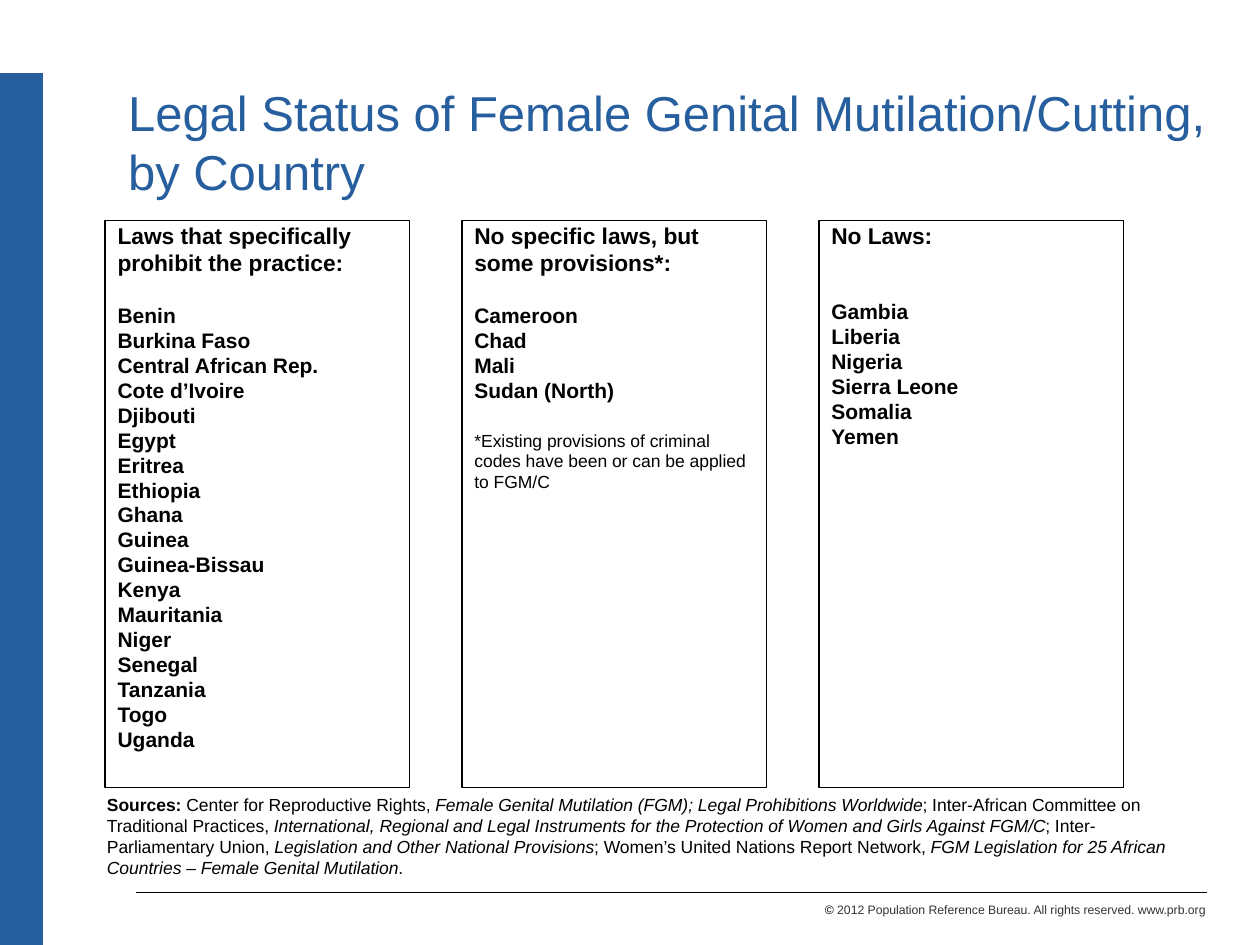
from dataclasses import dataclass

from lxml.etree import SubElement
from pptx import Presentation
from pptx.dml.color import RGBColor
from pptx.enum.shapes import MSO_CONNECTOR as CONN, MSO_SHAPE as SHAPE
from pptx.enum.text import MSO_ANCHOR as ANCHOR, MSO_AUTO_SIZE as AUTO, PP_ALIGN as ALIGN
from pptx.oxml.ns import qn
from pptx.util import Emu, Pt

PX = 9525  # 96 px to the inch
FONT = "Arial"
COLORS = {"blue": "265E9E", "black": "000000", "gray": "333333"}


@dataclass
class Group:
    """Lines of one style, with the gap in points above the first one."""
    lines: list[str]
    size: int
    bold: bool = True
    gap: float = 0


@dataclass
class Rule:
    start: tuple[int, int]
    end: tuple[int, int]
    color: str
    width: float


COLUMNS = [
    [Group(["Laws that specifically", "prohibit the practice:"], 13),
     Group(["Benin", "Burkina Faso", "Central African Rep.", "Cote d’Ivoire", "Djibouti",
            "Egypt", "Eritrea", "Ethiopia", "Ghana", "Guinea", "Guinea-Bissau", "Kenya",
            "Mauritania", "Niger", "Senegal", "Tanzania", "Togo", "Uganda"], 12, gap=18)],
    [Group(["No specific laws, but", "some provisions*:"], 13),
     Group(["Cameroon", "Chad", "Mali", "Sudan (North)"], 12, gap=18),
     Group(["*Existing provisions of criminal", "codes have been or can be applied",
            "to FGM/C"], 10, bold=False, gap=18)],
    [Group(["No Laws:"], 13),
     Group(["Gambia", "Liberia", "Nigeria", "Sierra Leone", "Somalia", "Yemen"], 12, gap=31.5)],
]
COL_LEFT, COL_TOP, COL_W, COL_H, COL_PITCH = 80, 168, 232, 432, 272

RULES = [
    Rule((16, 56), (16, 720), "blue", 25),
    Rule((920, 680), (104, 680), "black", 0.5),
]

# Roman and italic parts alternate after the bold label
SOURCES = [
    " Center for Reproductive Rights, ",
    "Female Genital Mutilation (FGM); Legal Prohibitions Worldwide",
    "; Inter-African Committee on Traditional Practices, ",
    "International, Regional and Legal Instruments for the Protection of Women and Girls"
    " Against FGM/C",
    "; Inter-Parliamentary Union, ",
    "Legislation and Other National Provisions",
    "; Women’s United Nations Report Network, ",
    "FGM Legislation for 25 African Countries – Female Genital Mutilation",
    ".",
]


def px(n: int) -> Emu:
    return Emu(n * PX)


def rgb(name: str) -> RGBColor:
    return RGBColor.from_string(COLORS[name])


def place(sp, left: int, top: int, width: int, height: int) -> None:
    box = {"left": left, "top": top, "width": width, "height": height}
    for name, value in box.items():
        setattr(sp, name, px(value))


def set_frame(tf, anchor=ANCHOR.TOP) -> None:
    fmt = {"word_wrap": True, "auto_size": AUTO.NONE, "vertical_anchor": anchor}
    for name, value in fmt.items():
        setattr(tf, name, value)


def add_run(p, text: str, size: int, color: str = "black",
            bold: bool = False, italic: bool = False) -> None:
    r = p.add_run()
    r.text = text
    fmt = {"name": FONT, "size": Pt(size), "bold": bold, "italic": italic}
    for name, value in fmt.items():
        setattr(r.font, name, value)
    r.font.color.rgb = rgb(color)


def add_rule(slide, rule: Rule) -> None:
    line = slide.shapes.add_connector(CONN.STRAIGHT, *map(px, rule.start + rule.end))
    line.line.color.rgb = rgb(rule.color)
    line.line.width = Pt(rule.width)
    SubElement(line._element.spPr, qn("a:effectLst"))


def add_text(slide, left: int, top: int, width: int, height: int):
    sp = slide.shapes.add_textbox(*map(px, (left, top, width, height)))
    set_frame(sp.text_frame)
    return sp.text_frame.paragraphs[0]


def fill_column(sp, groups: list[Group]) -> None:
    sp.fill.background()
    sp.line.color.rgb = rgb("black")
    sp.line.width = Pt(0.75)
    tf = sp.text_frame
    set_frame(tf)
    lines = [(g, i, text) for g in groups for i, text in enumerate(g.lines)]
    for n, (group, i, text) in enumerate(lines):
        p = tf.add_paragraph() if n else tf.paragraphs[0]
        pPr = p._p.get_or_add_pPr()
        pPr.set("marL", str(px(36)))
        pPr.set("indent", str(-px(36)))
        SubElement(pPr, qn("a:buNone"))
        before = group.gap if i == 0 else group.size * 0.23
        fmt = {"alignment": ALIGN.LEFT, "line_spacing": 0.8,
               "space_before": Pt(before if n else 0)}
        for name, value in fmt.items():
            setattr(p, name, value)
        add_run(p, text, group.size, bold=group.bold)


def main() -> None:
    prs = Presentation()
    prs.slide_width, prs.slide_height = px(960), px(720)
    slide = prs.slides.add_slide(prs.slide_layouts[1])
    title, body = slide.placeholders

    # Side bar and footer line
    for rule in RULES:
        add_rule(slide, rule)

    # Title
    place(title, 88, 56, 840, 104)
    set_frame(title.text_frame, ANCHOR.MIDDLE)
    p = title.text_frame.paragraphs[0]
    p.alignment = ALIGN.LEFT
    add_run(p, "Legal Status of Female Genital Mutilation/Cutting, by Country", 28, "blue")

    # Country columns: the first is the body placeholder
    for i, groups in enumerate(COLUMNS):
        box = (COL_LEFT + i * COL_PITCH, COL_TOP, COL_W, COL_H)
        if i == 0:
            sp = body
            place(sp, *box)
        else:
            sp = slide.shapes.add_shape(SHAPE.RECTANGLE, *map(px, box))
            sp.shadow.inherit = False
        fill_column(sp, groups)

    # Sources
    p = add_text(slide, 72, 600, 848, 74)
    add_run(p, "Sources:", 10, bold=True)
    for i, text in enumerate(SOURCES):
        add_run(p, text, 10, italic=i % 2 == 1)

    # Copyright line
    p = add_text(slide, 408, 683, 520, 21)
    p.alignment = ALIGN.RIGHT
    add_run(p, "© ", 7)
    add_run(p, "2012 Population Reference Bureau. All rights reserved. www.prb.org", 7, "gray")

    prs.save("out.pptx")


if __name__ == "__main__":
    main()
